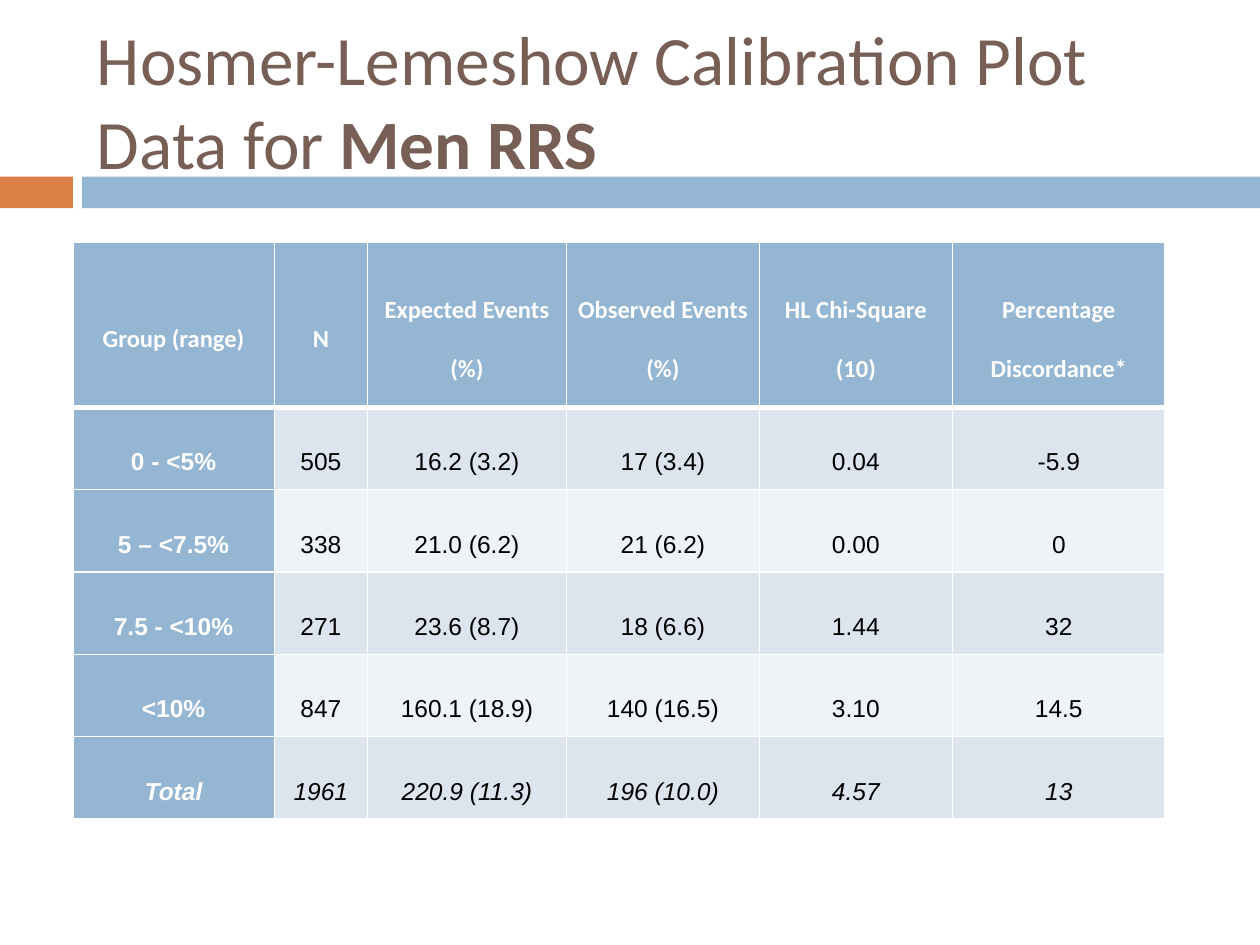
from dataclasses import dataclass
from typing import Any

from lxml.etree import SubElement
from pptx import Presentation
from pptx.dml.color import RGBColor
from pptx.enum.shapes import MSO_SHAPE as Preset
from pptx.enum.text import MSO_ANCHOR as Anchor, MSO_AUTO_SIZE as AutoSize, PP_ALIGN as Align
from pptx.oxml.ns import qn
from pptx.util import Cm, Pt

ROWS = [
    ["Group (range)", "N", "Expected Events (%)", "Observed Events (%)",
     "HL Chi-Square (10)", "Percentage Discordance*"],
    ["0 - <5%", "505", "16.2 (3.2)", "17 (3.4)", "0.04", "-5.9"],
    ["5 – <7.5%", "338", "21.0 (6.2)", "21 (6.2)", "0.00", "0"],
    ["7.5 - <10%", "271", "23.6 (8.7)", "18 (6.6)", "1.44", "32"],
    ["<10%", "847", "160.1 (18.9)", "140 (16.5)", "3.10", "14.5"],
    ["Total", "1961", "220.9 (11.3)", "196 (10.0)", "4.57", "13"],
]
COLUMN_WIDTHS = [4.06, 1.88, 4.01, 3.89, 3.89, 4.29]
HEADER_HEIGHT, ROW_HEIGHT = 3.33, 1.66


def rgb(color):
    return RGBColor.from_string(color)


def add_text(paragraph, text, *, font, size, color, bold=False, italic=False):
    run = paragraph.add_run()
    run.text = text
    run.font.name = font
    run.font.size = Pt(size)
    run.font.bold = bold
    run.font.italic = italic
    run.font.color.rgb = rgb(color)


def add_border(cell, side, color, width):
    """Draw one cell edge; side is L, R, T or B. Call before filling the cell."""
    line = SubElement(cell._tc.get_or_add_tcPr(), qn(f"a:ln{side}"), w=str(Pt(width)))
    fill = SubElement(line, qn("a:solidFill"))
    SubElement(fill, qn("a:srgbClr"), val=color)


@dataclass
class SlideBuilder:
    slide: Any
    heading_font: str = "Calibri"
    body_font: str = "Arial"
    title_color: str = "775F55"
    accent: str = "94B6D2"
    highlight: str = "DD8047"
    bands: tuple = ("DCE5EE", "EEF3F7")
    light: str = "FFFFFF"
    dark: str = "000000"

    def bar(self, left, top, width, height, color):
        shape = self.slide.shapes.add_shape(
            Preset.RECTANGLE, Cm(left), Cm(top), Cm(width), Cm(height))
        shape.shadow.inherit = False
        shape.fill.solid()
        shape.fill.fore_color.rgb = rgb(color)
        shape.line.fill.background()

    def title(self, left, top, width, height, plain, strong):
        title = self.slide.shapes.title
        title.left, title.top, title.width, title.height = map(Cm, (left, top, width, height))
        frame = title.text_frame
        frame.auto_size = AutoSize.NONE
        frame.vertical_anchor = Anchor.MIDDLE
        paragraph = frame.paragraphs[0]
        paragraph.alignment = Align.LEFT
        for text, bold in ((plain, False), (strong, True)):
            add_text(paragraph, text, font=self.heading_font, size=39.6,
                     color=self.title_color, bold=bold)

    def table(self, left, top, rows, widths, heights):
        table = self.slide.shapes.add_table(
            len(rows), len(widths), Cm(left), Cm(top), Cm(sum(widths)), Cm(sum(heights))).table
        for column, width in zip(table.columns, widths):
            column.width = Cm(width)
        for row, height in zip(table.rows, heights):
            row.height = Cm(height)
        for row_index, texts in enumerate(rows):
            for column_index, text in enumerate(texts):
                self.cell(table.cell(row_index, column_index), text, row_index, column_index,
                          italic=row_index == len(rows) - 1)

    def cell(self, cell, text, row_index, column_index, italic):
        is_header = row_index == 0
        is_label = is_header or column_index == 0
        cell.vertical_anchor = Anchor.MIDDLE
        cell.margin_left = cell.margin_right = Cm(0.1 if is_header else 0.18)
        cell.margin_top = cell.margin_bottom = 0
        for side in "LRTB":
            under_header = (row_index, side) in ((0, "B"), (1, "T"))
            add_border(cell, side, self.light, 3 if under_header else 1)
        cell.fill.solid()
        cell.fill.fore_color.rgb = rgb(
            self.accent if is_label else self.bands[(row_index - 1) % 2])
        paragraph = cell.text_frame.paragraphs[0]
        paragraph.alignment = Align.CENTER
        paragraph.line_spacing = 2.0
        add_text(paragraph, text, font=self.heading_font if is_header else self.body_font,
                 size=14, color=self.light if is_label else self.dark,
                 bold=is_label, italic=italic)


def main():
    presentation = Presentation()
    presentation.slide_width, presentation.slide_height = Cm(25.4), Cm(19.05)
    title_only = presentation.slide_layouts[5]
    builder = SlideBuilder(presentation.slides.add_slide(title_only))
    builder.bar(0, 3.56, 1.47, 0.64, builder.highlight)
    builder.bar(1.65, 3.56, 23.75, 0.64, builder.accent)
    builder.title(1.7, 0.64, 22.65, 2.74,
                  "Hosmer-Lemeshow Calibration Plot Data for ", "Men RRS")
    heights = [HEADER_HEIGHT] + [ROW_HEIGHT] * (len(ROWS) - 1)
    builder.table(1.47, 4.88, ROWS, COLUMN_WIDTHS, heights)
    presentation.save("out.pptx")


if __name__ == "__main__":
    main()
